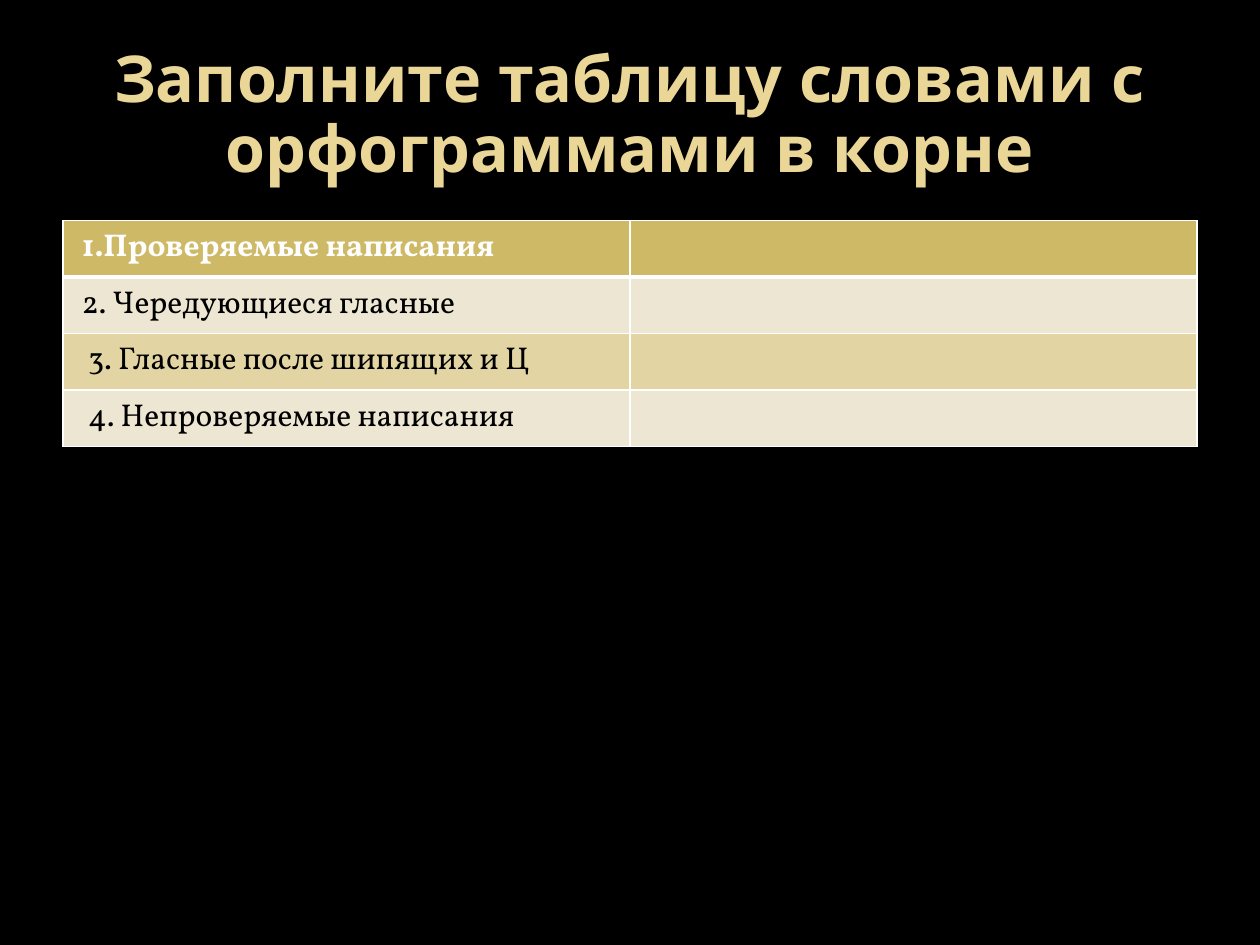
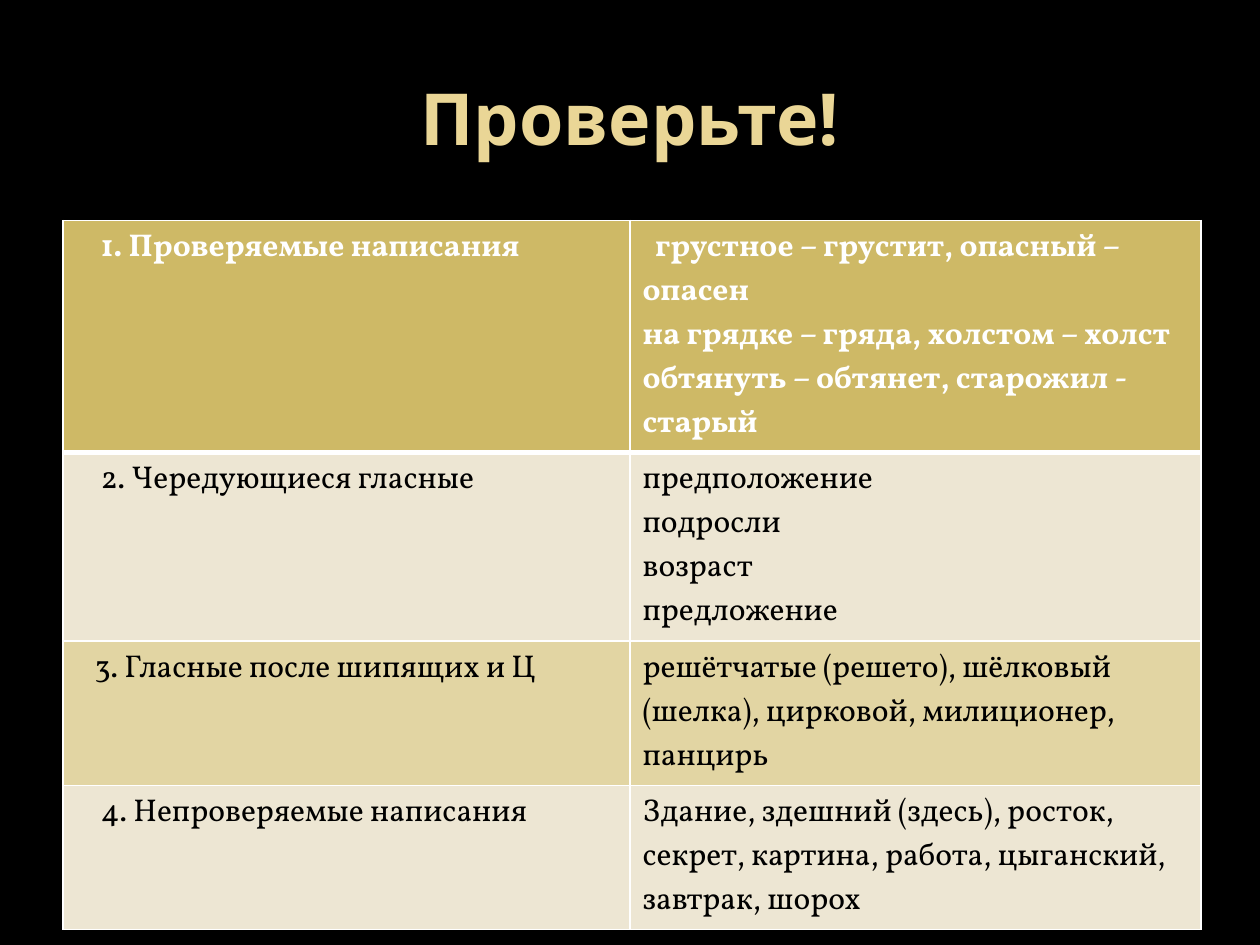
from lxml import etree
from pptx import Presentation
from pptx.dml.color import RGBColor
from pptx.enum.text import MSO_ANCHOR, MSO_AUTO_SIZE, PP_ALIGN
from pptx.oxml.ns import qn
from pptx.util import Inches, Pt

CENTER = PP_ALIGN.CENTER
MIDDLE = MSO_ANCHOR.MIDDLE
NO_FIT = MSO_AUTO_SIZE.NONE
TITLE_ONLY = 5

BLACK, WHITE = "000000", "FFFFFF"
TITLE_GOLD, HEADER_GOLD = "EAD696", "CEB966"
BAND_COLORS = ("E2D5A3", "EDE6D3")
TITLE_FONT, BODY_FONT = "Noto Sans", "Vollkorn"
BODY_SIZE = 18
ROW_HEIGHT = 0.41
THIN, THICK = 1, 3


def color(hex_string):
    return RGBColor.from_string(hex_string)


class SlideBuilder:
    """Holds the shared style and the slide being built."""

    def __init__(self, deck):
        self.deck = deck
        self.page = None

    def new_slide(self):
        self.page = self.deck.slides.add_slide(self.deck.slide_layouts[TITLE_ONLY])
        background = self.page.background.fill
        background.solid()
        background.fore_color.rgb = color(BLACK)

    def span(self, para, text, font_name, size, hex_string, bold):
        run = para.add_run()
        run.text = text
        run.font.name = font_name
        run.font.size = Pt(size)
        run.font.bold = bold
        run.font.color.rgb = color(hex_string)

    def title(self, text, size, line_spacing=1.0):
        box = self.page.shapes.title
        box.left, box.top = Inches(0.5), Inches(0.3)
        box.width, box.height = Inches(9), Inches(1.25)
        frame = box.text_frame
        frame.word_wrap = True
        frame.auto_size = NO_FIT
        frame.vertical_anchor = MIDDLE
        para = frame.paragraphs[0]
        para.alignment = CENTER
        para.line_spacing = line_spacing
        self.span(para, text, TITLE_FONT, size, TITLE_GOLD, True)

    def borders(self, cell, top, bottom):
        """Draw white cell edges; they must come before the cell fill."""
        properties = cell._tc.get_or_add_tcPr()
        edges = {"a:lnL": THIN, "a:lnR": THIN, "a:lnT": top, "a:lnB": bottom}
        for tag, width in edges.items():
            line = etree.SubElement(properties, qn(tag), w=str(Pt(width)))
            fill = etree.SubElement(line, qn("a:solidFill"))
            etree.SubElement(fill, qn("a:srgbClr"), val=WHITE)

    def cell(self, cell, row_index, lines):
        """Fill a cell with (text, first-line indent) pairs."""
        header = row_index == 0
        self.borders(cell, THICK if row_index == 1 else THIN,
                     THICK if header else THIN)
        cell.fill.solid()
        cell.fill.fore_color.rgb = color(
            HEADER_GOLD if header else BAND_COLORS[row_index % 2])
        frame = cell.text_frame
        for index, (text, indent) in enumerate(lines):
            para = frame.add_paragraph() if index else frame.paragraphs[0]
            if indent:
                para._p.get_or_add_pPr().set("indent", str(Inches(indent)))
            self.span(para, text, BODY_FONT, BODY_SIZE,
                      WHITE if header else BLACK, header)

    def table(self, rows, column_widths, height):
        holder = self.page.shapes.add_table(
            len(rows), len(column_widths), Inches(0.5), Inches(1.75),
            Inches(sum(column_widths)), Inches(height))
        table = holder.table
        table.horz_banding = False
        for column, width in zip(table.columns, column_widths):
            column.width = Inches(width)
        for row_index, row in enumerate(rows):
            table.rows[row_index].height = Inches(ROW_HEIGHT)
            for column_index, lines in enumerate(row):
                self.cell(table.cell(row_index, column_index), row_index, lines)
        holder.height = Inches(height)


def main():
    deck = Presentation()
    deck.slide_width, deck.slide_height = Inches(10), Inches(7.5)
    builder = SlideBuilder(deck)

    # Exercise: the answer column stays empty
    builder.new_slide()
    builder.title("Заполните таблицу словами с орфограммами в корне", 36.9, 0.9)
    builder.table([
        ([("1.Проверяемые написания", 0.05)], []),
        ([("2. Чередующиеся гласные", 0.05)], []),
        ([("3. Гласные после шипящих и Ц", 0.1)], []),
        ([("4. Непроверяемые написания", 0.1)], []),
    ], (4.5, 4.5), 2.51)

    # Answers
    builder.new_slide()
    builder.title("Проверьте!", 41)
    builder.table([
        ([("1. Проверяемые написания", 0.2)],
         [("грустное – грустит, опасный – опасен", 0.1),
          ("на грядке – гряда, холстом – холст", 0),
          ("обтянуть – обтянет, старожил - старый", 0)]),
        ([("2. Чередующиеся гласные", 0.2)],
         [(word, 0) for word in
          ("предположение", "подросли", "возраст", "предложение")]),
        ([("3. Гласные после шипящих и Ц", 0.15)],
         [("решётчатые (решето), шёлковый (шелка), цирковой, "
           "милиционер, панцирь", 0)]),
        ([("4. Непроверяемые написания", 0.2)],
         [("Здание, здешний (здесь), росток, секрет, картина, работа, "
           "цыганский, завтрак, шорох", 0)]),
    ], (4.5, 4.53), 4.9)

    deck.save("out.pptx")


if __name__ == "__main__":
    main()
